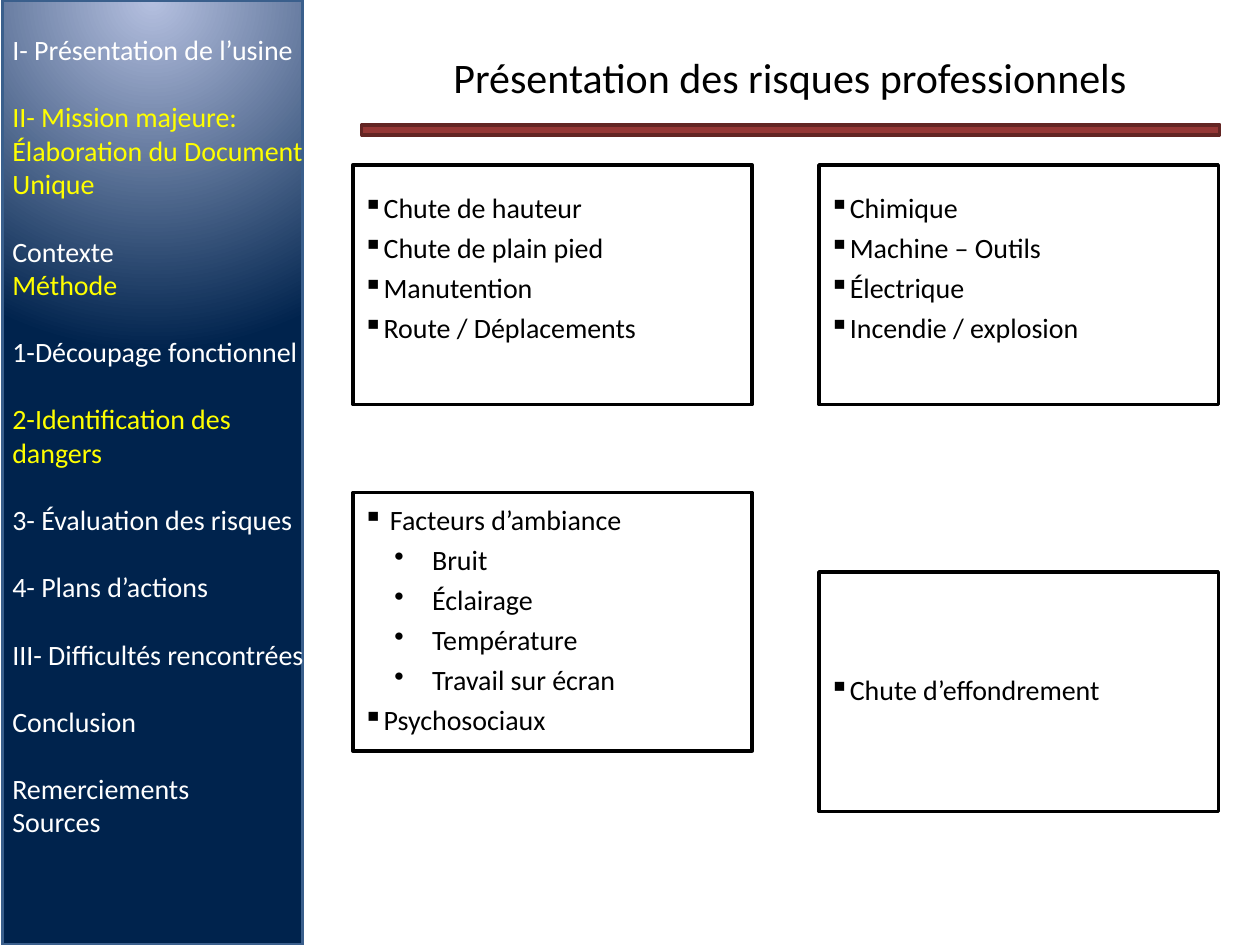
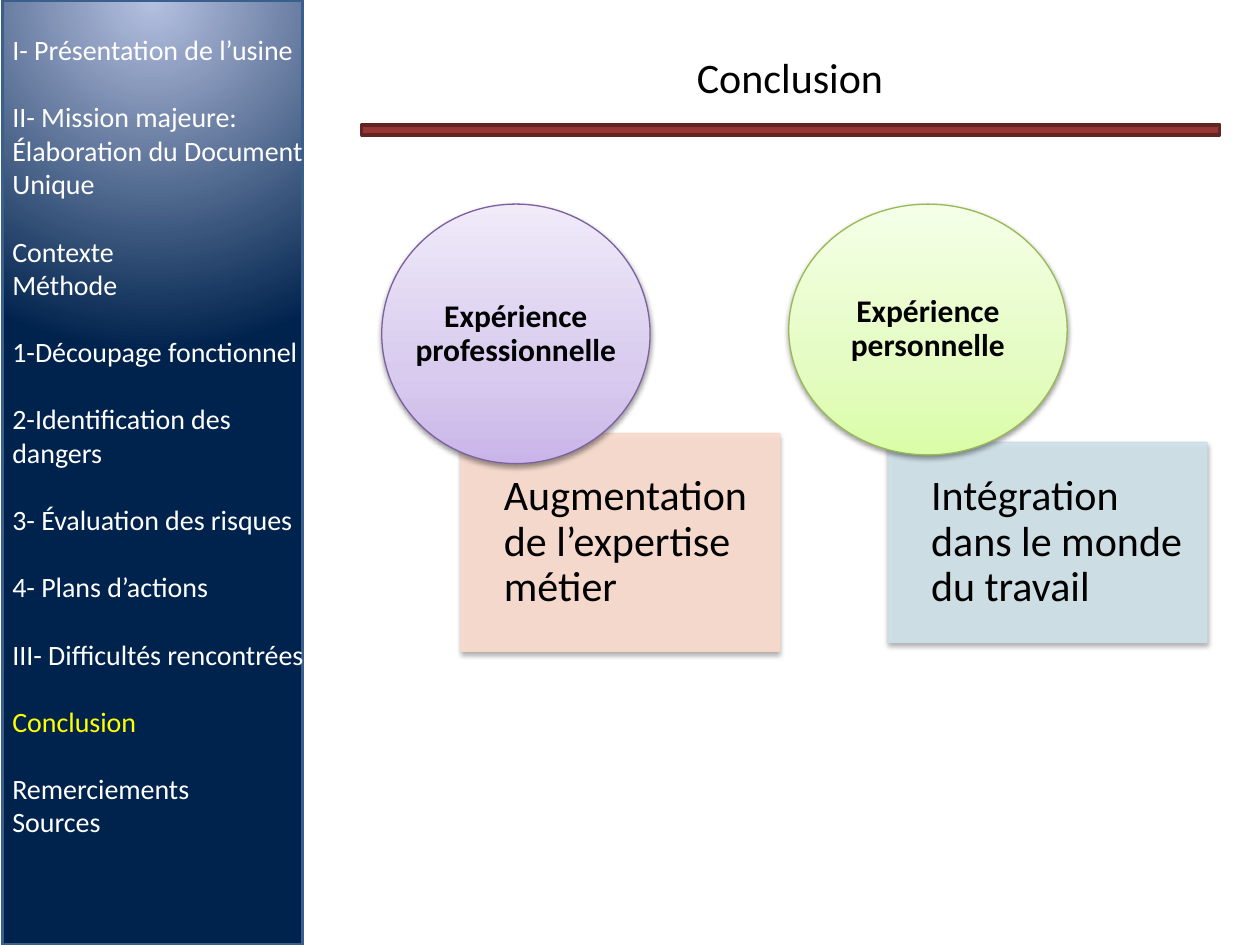
from lxml.etree import SubElement as Sub
from pptx import Presentation
from pptx.dml.color import RGBColor as Rgb
from pptx.enum.shapes import MSO_SHAPE as Kind
from pptx.enum.text import MSO_ANCHOR as Anchor, PP_ALIGN as Align
from pptx.oxml import parse_xml
from pptx.oxml.ns import nsdecls, qn
from pptx.util import Inches, Pt

HUES = {
    "black": "000000", "white": "FFFFFF", "yellow": "FFFF00",
    "edge": "3A5F8C", "sky": "B5C0E0", "navy": "00234D",
    "red": "953735", "wine": "632523",
    "peach": "FCDDCF", "rose": "F8D8C9", "ice": "D0E3EA", "mist": "CBDEE5",
    "violet": "7D60A0", "olive": "98B955",
    "lilac1": "C9B5E8", "lilac2": "D8CBEE", "lilac3": "F0EAF9",
    "lime1": "DAFDA7", "lime2": "E4FCC2", "lime3": "F5FFE7",
}
RADIAL = ('<a:path path="circle"><a:fillToRect l="50000" t="0" r="50000" '
          'b="100000"/></a:path>')
UPWARD = '<a:lin ang="16200000" scaled="0"/>'


def draw(page, kind, box, fill, line, width, way=UPWARD):
    """Add a shape; fill is a colour name or a list of (stop, name)."""
    shape = page.shapes.add_shape(kind, *map(Inches, box))
    shape.shadow.inherit = False
    shape.line.color.rgb = Rgb.from_string(HUES[line])
    shape.line.width = Pt(width)
    if isinstance(fill, str):
        shape.fill.solid()
        shape.fill.fore_color.rgb = Rgb.from_string(HUES[fill])
    else:
        shape.fill.background()
        stops = "".join(f'<a:gs pos="{pos * 1000}"><a:srgbClr val="{HUES[name]}"/></a:gs>'
                        for pos, name in fill)
        grad = parse_xml(f'<a:gradFill {nsdecls("a")} rotWithShape="1">'
                         f'<a:gsLst>{stops}</a:gsLst>{way}</a:gradFill>')
        props = shape._element.spPr
        props.replace(props.find(qn("a:noFill")), grad)
    return shape


def write(frame, rows, size, look, pads=None, bold=False):
    """Fill a text frame with (text, colour name, extra format) rows."""
    frame.word_wrap = True
    for side, pad in (pads or {}).items():
        setattr(frame, "margin_" + side, Inches(pad))
    for num, (text, hue, more) in enumerate(rows):
        par = frame.add_paragraph() if num else frame.paragraphs[0]
        par.text = text
        for key, val in {**look, **more}.items():
            setattr(par, key, val)
        font = {"name": "Calibri", "size": Pt(size), "bold": bold}
        for key, val in font.items():
            setattr(par.font, key, val)
        par.font.color.rgb = Rgb.from_string(HUES[hue])


deck = Presentation()
deck.slide_width, deck.slide_height = Inches(10), Inches(7.5)
plan = deck.slide_layouts[5]

# Shared layout: title place, side band and red rule
head = plan.placeholders[0]
place = {"left": 1.77, "top": 0.29, "width": 9, "height": 0.63}
for key, val in place.items():
    setattr(head, key, Inches(val))

names = ["Présentation des risques professionnels", "Conclusion"]
pages = [deck.slides.add_slide(plan) for name in names]
risks, close = pages
band = draw(risks, Kind.RECTANGLE, (0.02, 0, 2.38, 7.5),
            [(0, "sky"), (71, "navy")], "edge", 2, RADIAL)
rule = draw(risks, Kind.RECTANGLE, (2.87, 0.99, 6.81, 0.08), "red", "wine", 2)
for spot, shape in enumerate((band, rule), 2):
    plan.shapes._spTree.insert(spot, shape._element)

# Titles
for page, name in zip(pages, names):
    title = page.shapes.title.text_frame
    title.vertical_anchor = Anchor.MIDDLE
    write(title, [(name, "black", {})], 24, {"alignment": Align.CENTER})

# Risk boxes: place, bottom pad, lines as (level, text)
boxes = [
    ((2.8, 1.31, 3.17, 1.9), 0.32,
     [(0, "Chute de hauteur"), (0, "Chute de plain pied"),
      (0, "Manutention"), (0, "Route / Déplacements")]),
    ((6.5, 1.31, 3.17, 1.9), 0.32,
     [(0, "Chimique"), (0, "Machine – Outils"),
      (0, "Électrique"), (0, "Incendie / explosion")]),
    ((2.8, 3.91, 3.17, 2.05), 0.08,
     [(0, " Facteurs d’ambiance"), (1, " Bruit"), (1, " Éclairage"),
      (1, " Température"), (1, " Travail sur écran"), (0, "Psychosociaux")]),
    ((6.5, 4.54, 3.17, 1.9), 0.08, [(0, "Chute d’effondrement")]),
]
marks = [("▪", 0, 0), ("•", 0.5, -0.25)]
for box, foot, items in boxes:
    shape = draw(risks, Kind.RECTANGLE, box, "white", "black", 2)
    frame = shape.text_frame
    frame.vertical_anchor = Anchor.MIDDLE
    write(frame, [(text, "black", {"level": level}) for level, text in items], 16,
          {"alignment": Align.LEFT, "line_spacing": 0.9, "space_after": Pt(5.6)},
          {"left": 0.08, "top": 0.08, "right": 0.08, "bottom": foot})
    for par, (level, text) in zip(frame.paragraphs, items):
        mark, left, hang = marks[level]
        props = par._p.get_or_add_pPr()
        props.set("marL", str(Inches(left)))
        props.set("indent", str(Inches(hang)))
        bullet = parse_xml(f'<a:buChar {nsdecls("a")} char="{mark}"/>')
        after = props.find(qn("a:spcAft"))
        after.addnext(bullet)

# Conclusion cards and discs
lilac = [(0, "lilac1"), (35, "lilac2"), (100, "lilac3")]
lime = [(0, "lime1"), (35, "lime2"), (100, "lime3")]
parts = [
    (Kind.RECTANGLE, (7.05, 3.51, 2.53, 1.59), "ice", "mist",
     "Intégration dans le monde du travail"),
    (Kind.RECTANGLE, (3.66, 3.44, 2.53, 1.73), "peach", "rose",
     "Augmentation de l’expertise métier"),
    (Kind.OVAL, (6.26, 1.62, 2.21, 1.99), lime, "olive",
     "Expérience\vpersonnelle"),
    (Kind.OVAL, (3.03, 1.62, 2.13, 2.06), lilac, "violet",
     "Expérience\vprofessionnelle"),
]
for kind, box, fill, line, text in parts:
    shape = draw(close, kind, box, fill, line, 0.75)
    disc = kind == Kind.OVAL
    props = shape._element.spPr
    if not disc:
        for tint in list(props.iter(qn("a:srgbClr"))):
            Sub(tint, qn("a:alpha"), val="90000")
    shade = Sub(props.find(qn("a:effectLst")), qn("a:outerShdw"),
                blurRad=str(Pt(3.1)), dist=str(Pt(1.6 if disc else 1.8)),
                dir="5400000", rotWithShape="0")
    tint = Sub(shade, qn("a:srgbClr"), val=HUES["black"])
    Sub(tint, qn("a:alpha"), val="38000" if disc else "35000")
    frame = shape.text_frame
    frame.vertical_anchor = Anchor.MIDDLE
    pads = dict.fromkeys(("left", "top", "right", "bottom"), 0 if disc else 0.12)
    if not disc:
        pads["left"] = 0.34
    size = 18 if disc else 24
    look = {"alignment": Align.CENTER if disc else Align.LEFT,
            "line_spacing": 0.9, "space_after": Pt(size * 0.35)}
    write(frame, [(text, "black", {})], size, look, pads, disc)
    frame.word_wrap = not disc

# Side menu: groups of lines, with the current ones in yellow
menu = [
    ["I- Présentation de l’usine"],
    ["II- Mission majeure: Élaboration du Document Unique"],
    ["Contexte", "Méthode"],
    ["1-Découpage fonctionnel"],
    ["2-Identification des dangers"],
    ["3- Évaluation des risques"],
    ["4- Plans d’actions"],
    ["III- Difficultés rencontrées"],
    ["Conclusion"],
    ["Remerciements", "Sources"],
]
active = [{menu[1][0], "Méthode", menu[4][0]}, {"Conclusion"}]
for page, lit in zip(pages, active):
    rows = []
    for group in menu:
        for num, text in enumerate(group):
            gap = Pt(19.2) if rows and num == 0 else Pt(0)
            rows.append((text, "yellow" if text in lit else "white",
                         {"space_before": gap}))
    side = page.shapes.add_textbox(*map(Inches, (0, 0.21, 2.64, 6.83)))
    write(side.text_frame, rows, 16, {"alignment": Align.LEFT})

deck.save("out.pptx")
